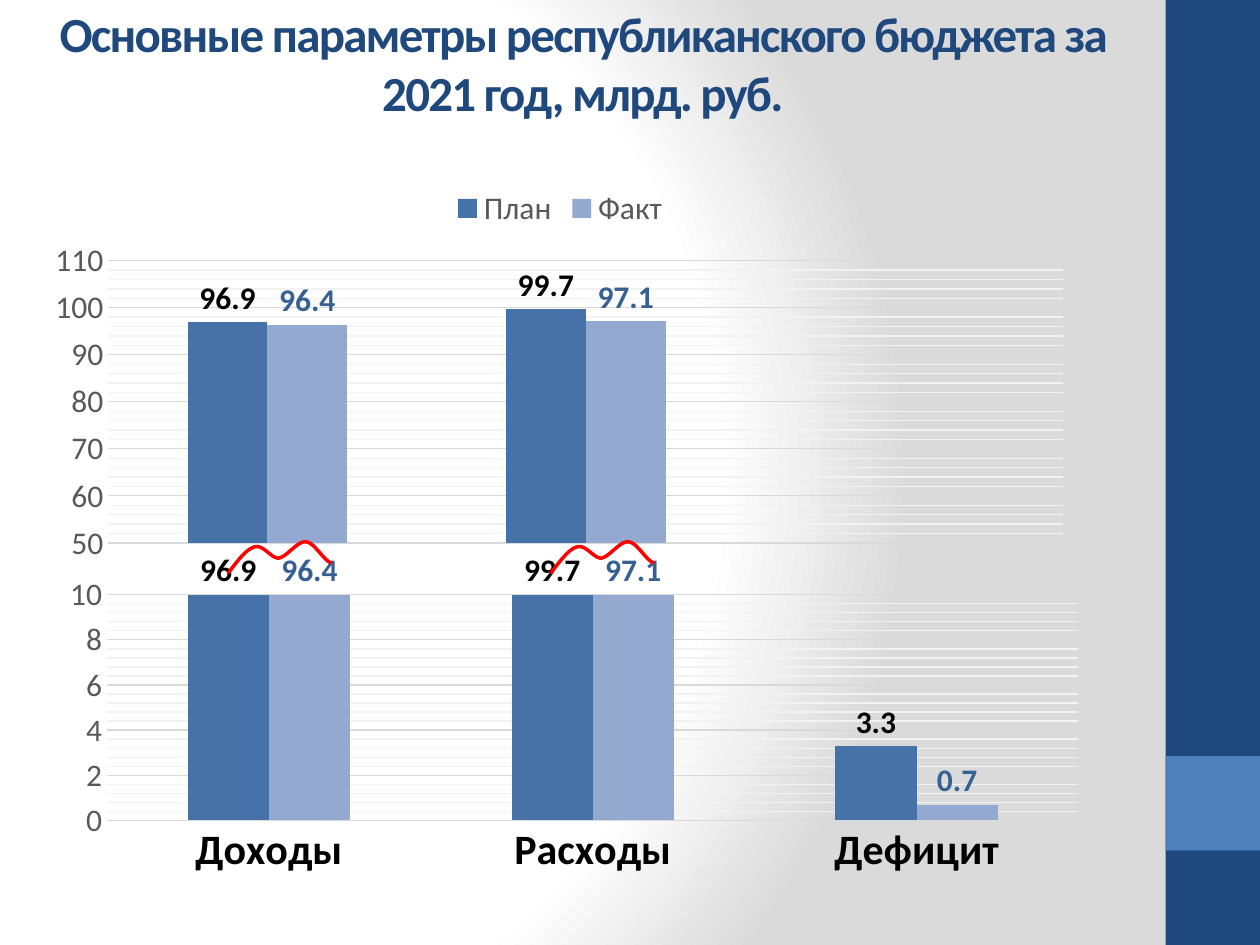
from lxml import etree
from pptx import Presentation
from pptx import util as u
from pptx.chart.data import CategoryChartData
from pptx.dml.color import RGBColor
from pptx.enum import chart as ch
from pptx.enum import shapes, text
from pptx.oxml import parse_xml
from pptx.oxml.ns import nsdecls, qn

COLORS = {
    "navy": "1F497D", "blue": "4F81BD", "white": "FFFFFF", "shade": "DADADA",
    "plan": "4672A8", "fact": "93A9CF", "fact_label": "376092",
    "black": "000000", "gray": "595959", "grid": "D9D9D9",
    "minor_grid": "F2F2F2", "red": "FF0000",
}
PLAN = (96.9, 99.7, 3.3)
FACT = (96.4, 97.1, 0.7)


class SlideBuilder:
    font = "Calibri"

    def __init__(self, page):
        self.page = page

    def color(self, name):
        return RGBColor.from_string(COLORS[name])

    def style(self, font, size, color, bold=False):
        font.name, font.size, font.bold = self.font, u.Pt(size), bold
        font.color.rgb = self.color(color)

    def line(self, line, color, width=0.75):
        line.color.rgb = self.color(color)
        line.width = u.Pt(width)

    def background(self, stops, focus):
        self.page.background.fill.gradient()
        gradient = self.page._element.find(".//" + qn("a:gradFill"))
        marks = "".join(
            f'<a:gs pos="{pos * 1000}"><a:srgbClr val="{COLORS[name]}"/></a:gs>'
            for pos, name in stops)
        sides = " ".join(f'{side}="{value * 1000}"' for side, value in zip("ltrb", focus))
        gradient.getparent().replace(gradient, parse_xml(
            f'<a:gradFill {nsdecls("a")} rotWithShape="1"><a:gsLst>{marks}</a:gsLst>'
            f'<a:path path="circle"><a:fillToRect {sides}/></a:path></a:gradFill>'))

    def rectangle(self, left, top, width, height, color):
        box = self.page.shapes.add_shape(
            shapes.MSO_SHAPE.RECTANGLE, *map(u.Inches, (left, top, width, height)))
        box.shadow.inherit = False
        box.fill.solid()
        box.fill.fore_color.rgb = self.color(color)
        box.line.fill.background()

    def title(self, left, top, width, height, wording):
        box = self.page.shapes.add_textbox(*map(u.Inches, (left, top, width, height)))
        frame = box.text_frame
        frame.text = wording
        frame.word_wrap = True
        frame.vertical_anchor = text.MSO_ANCHOR.MIDDLE
        para = frame.paragraphs[0]
        para.alignment = text.PP_ALIGN.CENTER
        span = para.runs[0]
        self.style(span.font, 28, "navy", True)
        span.font._element.set("spc", "-100")

    def chart(self, place, plot_place, categories, names, scale):
        data = CategoryChartData()
        data.categories = categories
        for name, values in zip(names, (PLAN, FACT)):
            data.add_series(name, values)
        chart = self.page.shapes.add_chart(
            ch.XL_CHART_TYPE.COLUMN_CLUSTERED, *map(u.Inches, place), data).chart
        self.style(chart.font, 18, "black")
        chart.has_title = False
        chart.has_legend = False
        plot = chart.plots[0]
        plot.gap_width, plot.overlap, plot.vary_by_categories = 199, 0, False
        for series, fill, label in zip(plot.series, ("plan", "fact"), ("black", "fact_label")):
            series.format.fill.solid()
            series.format.fill.fore_color.rgb = self.color(fill)
            series.invert_if_negative = False
            labels = series.data_labels
            labels.show_value = True
            labels.position = ch.XL_LABEL_POSITION.OUTSIDE_END
            self.style(labels.font, 18, label, True)

        axis = chart.value_axis
        axis.minimum_scale, axis.maximum_scale, axis.major_unit = scale
        axis.minor_unit = axis.major_unit / 5
        axis.major_tick_mark = axis.minor_tick_mark = ch.XL_TICK_MARK.NONE
        axis.has_major_gridlines = axis.has_minor_gridlines = True
        self.line(axis.major_gridlines.format.line, "grid")
        self.minor_gridlines(axis, "minor_grid")
        axis.format.line.fill.background()
        self.style(axis.tick_labels.font, 18, "gray")

        axis = chart.category_axis
        axis.major_tick_mark = ch.XL_TICK_MARK.NONE
        self.line(axis.format.line, "grid")
        self.style(axis.tick_labels.font, 24, "black", True)
        self.plot_layout(chart, place, plot_place)
        return chart

    def minor_gridlines(self, axis, color):
        axis._element.find(qn("c:minorGridlines")).append(parse_xml(
            f'<c:spPr {nsdecls("c", "a")}><a:ln w="{u.Pt(0.75)}"><a:solidFill>'
            f'<a:srgbClr val="{COLORS[color]}"/></a:solidFill></a:ln></c:spPr>'))

    def plot_layout(self, chart, place, plot_place):
        left, top, width, height = place
        x, y, w, h = plot_place
        area = chart._chartSpace.find(".//" + qn("c:plotArea"))
        for old in area.findall(qn("c:layout")):
            area.remove(old)
        layout = etree.Element(qn("c:layout"))
        manual = etree.SubElement(layout, qn("c:manualLayout"))
        settings = (("layoutTarget", "inner"), ("xMode", "edge"), ("yMode", "edge"),
                    ("x", (x - left) / width), ("y", (y - top) / height),
                    ("w", w / width), ("h", h / height))
        for tag, value in settings:
            etree.SubElement(manual, qn(f"c:{tag}")).set("val", str(value))
        area.insert(0, layout)

    def legend(self, chart):
        chart.has_legend = True
        chart.legend.position = ch.XL_LEGEND_POSITION.TOP
        chart.legend.include_in_layout = False
        self.style(chart.legend.font, 18, "gray")

    def wave(self, left, top, knots, steps=12):
        points = [knots[0]]
        for start in range(0, len(knots) - 1, 3):
            a, b, c, d = knots[start:start + 4]
            for step in range(1, steps + 1):
                t = step / steps
                s = 1 - t
                points.append(tuple(
                    s**3 * p + 3 * s * s * t * q + 3 * s * t * t * r + t**3 * e
                    for p, q, r, e in zip(a, b, c, d)))
        points = [(u.Inches(left + x), u.Inches(top + y)) for x, y in points]
        builder = self.page.shapes.build_freeform(*points[0])
        builder.add_line_segments(points[1:], close=False)
        shape = builder.convert_to_shape()
        shape.shadow.inherit = False
        shape.fill.background()
        self.line(shape.line, "red", 2)


def main():
    deck = Presentation()
    deck.slide_width, deck.slide_height = u.Inches(10), u.Inches(7.5)
    slide = SlideBuilder(deck.slides.add_slide(deck.slide_layouts[6]))

    slide.background(((0, "white"), (75, "white"), (100, "shade")), (20, 50, 100, 50))
    slide.rectangle(9.25, 0, 0.75, 7.5, "navy")
    slide.rectangle(9.25, 6, 0.75, 0.75, "blue")
    slide.title(0, 0, 9.25, 0.99,
                "Основные параметры республиканского бюджета за 2021 год, млрд. руб.")

    slide.chart((0.39, 4.38, 8.33, 2.6), (0.85, 4.71, 7.71, 1.8),
                ("Доходы", "Расходы", "Дефицит"), ("Series 1", "Series 2"), (0, 10, 2))
    upper = slide.chart((0.28, 1.38, 8.33, 3.15), (0.86, 2.07, 7.58, 2.24),
                        ("1", "2", "3"), ("План", "Факт"), (50, 110, 10))
    upper.category_axis.visible = False
    slide.legend(upper)

    knots = ((0, 0.25), (0.07, 0.16), (0.14, 0.06), (0.21, 0.04), (0.28, 0.02),
             (0.34, 0.13), (0.4, 0.13), (0.47, 0.12), (0.55, -0.01), (0.62, 0),
             (0.69, 0.01), (0.75, 0.14), (0.82, 0.17))
    for left in (1.81, 4.37):
        slide.wave(left, 4.3, knots)

    deck.save("out.pptx")


if __name__ == "__main__":
    main()
